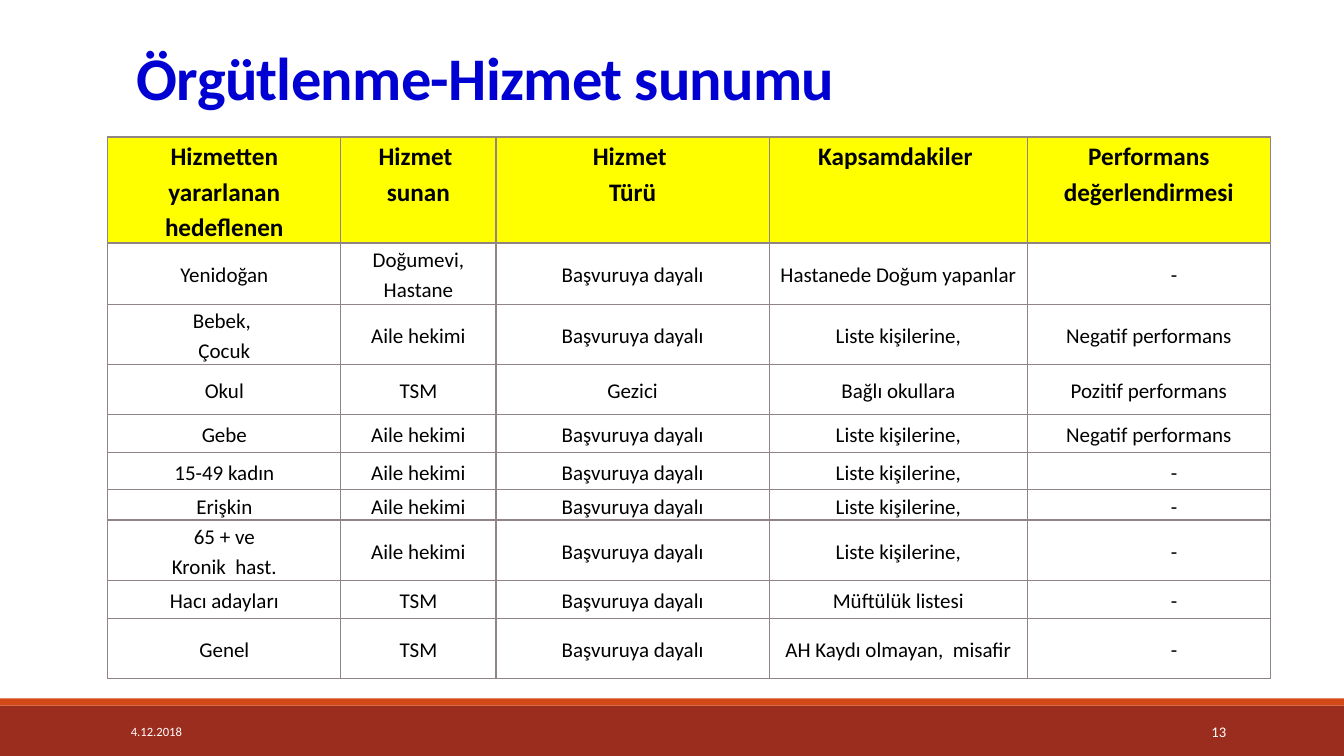
from lxml import etree
from pptx import Presentation
from pptx.dml.color import RGBColor
from pptx.enum.shapes import MSO_SHAPE
from pptx.enum.text import MSO_ANCHOR, PP_ALIGN
from pptx.oxml.ns import qn
from pptx.util import Pt

PX = 9144
FONT = "Calibri"
RECTANGLE = MSO_SHAPE.RECTANGLE
TOP, MIDDLE, BOTTOM = MSO_ANCHOR.TOP, MSO_ANCHOR.MIDDLE, MSO_ANCHOR.BOTTOM
LEFT, CENTER, RIGHT = PP_ALIGN.LEFT, PP_ALIGN.CENTER, PP_ALIGN.RIGHT

BLACK = RGBColor(0x00, 0x00, 0x00)
WHITE = RGBColor(0xFF, 0xFF, 0xFF)
BLUE = RGBColor(0x00, 0x00, 0xD2)
YELLOW = RGBColor(0xFF, 0xFF, 0x00)
BRICK = RGBColor(0x9B, 0x2D, 0x1F)
ORANGE = RGBColor(0xD3, 0x48, 0x17)
GREY = RGBColor(0x91, 0x84, 0x85)

COLUMN_WIDTHS = [231, 154, 271, 256, 241]
ROW_HEIGHTS = [105, 61, 60, 49, 38, 37, 30, 60, 38, 59]
DASH_INDENT = 50

ON_REQUEST = "Başvuruya dayalı"
DOCTOR = "Aile hekimi"
LISTED = "Liste kişilerine,"
NEGATIVE = "Negatif performans"
ROWS = [
    ["Hizmetten yararlanan\nhedeflenen", "Hizmet \nsunan", "Hizmet \nTürü",
     "Kapsamdakiler ", "Performans\ndeğerlendirmesi"],
    ["Yenidoğan", "Doğumevi,\nHastane", ON_REQUEST, "Hastanede Doğum yapanlar", "-"],
    ["Bebek, \nÇocuk", DOCTOR, ON_REQUEST, LISTED, NEGATIVE],
    ["Okul", "TSM", "Gezici", "Bağlı okullara", "Pozitif performans"],
    ["Gebe", DOCTOR, ON_REQUEST, LISTED, NEGATIVE],
    ["15-49 kadın", DOCTOR, ON_REQUEST, LISTED, "-"],
    ["Erişkin", DOCTOR, ON_REQUEST, LISTED, "-"],
    ["65 + ve\nKronik  hast.", DOCTOR, ON_REQUEST, LISTED, "-"],
    ["Hacı adayları", "TSM", ON_REQUEST, "Müftülük listesi", "-"],
    ["Genel", "TSM", ON_REQUEST, "AH Kaydı olmayan,  misafir", "-"],
]


def format_paragraph(para, size, color, bold, align, spacing):
    """Style one paragraph and its runs."""
    para.alignment = align
    para.line_spacing = spacing
    for span in para.runs:
        span.font.name = FONT
        span.font.size = Pt(size)
        span.font.bold = bold
        span.font.color.rgb = color


def add_band(page, top, height, color):
    """Draw a plain band across the whole slide."""
    band = page.shapes.add_shape(RECTANGLE, 0, top * PX, 1333 * PX, height * PX)
    band.shadow.inherit = False
    band.fill.solid()
    band.fill.fore_color.rgb = color
    band.line.fill.background()


def add_text(page, text, area, size, color, align, anchor, bold=False, spacing=1.0):
    """Add a one-paragraph text box and return its paragraph."""
    box = page.shapes.add_textbox(*(length * PX for length in area))
    frame = box.text_frame
    frame.word_wrap = True
    frame.vertical_anchor = anchor
    frame.text = text
    para = frame.paragraphs[0]
    format_paragraph(para, size, color, bold, align, spacing)
    return para


def add_border(cell, side, points):
    """Append one grey border line to a table cell."""
    properties = cell._tc.get_or_add_tcPr()
    line = etree.SubElement(properties, qn(f"a:{side}"), w=str(Pt(points)))
    fill = etree.SubElement(line, qn("a:solidFill"))
    etree.SubElement(fill, qn("a:srgbClr"), val=str(GREY))


def fill_cell(cell, text, is_header, is_below_header):
    """Write and style one table cell."""
    for side in ("lnL", "lnR", "lnT", "lnB"):
        thick = is_header and side == "lnB" or is_below_header and side == "lnT"
        add_border(cell, side, 2 if thick else 1)
    if is_header:
        cell.fill.solid()
        cell.fill.fore_color.rgb = YELLOW
    else:
        cell.fill.background()
    cell.margin_left = cell.margin_right = 6 * PX
    cell.margin_top = cell.margin_bottom = 0
    cell.vertical_anchor = TOP if is_header else MIDDLE
    cell.text_frame.text = text
    for para in cell.text_frame.paragraphs:
        format_paragraph(para, 18 if is_header else 15, BLACK, is_header, CENTER, 1.15)
        if text == "-":
            para._p.get_or_add_pPr().set("marL", str(DASH_INDENT * PX))


def add_service_table(page):
    """Add the table of services by target group."""
    frame = page.shapes.add_table(
        len(ROWS), len(COLUMN_WIDTHS), 107 * PX, 136 * PX,
        sum(COLUMN_WIDTHS) * PX, sum(ROW_HEIGHTS) * PX)
    table = frame.table
    table.horz_banding = False
    for column, width in zip(table.columns, COLUMN_WIDTHS):
        column.width = width * PX
    for index, (row, height, texts) in enumerate(zip(table.rows, ROW_HEIGHTS, ROWS)):
        row.height = height * PX
        for cell, text in zip(row.cells, texts):
            fill_cell(cell, text, index == 0, index == 1)


def main():
    """Build the slide and save it."""
    deck = Presentation()
    deck.slide_width = 1333 * PX
    deck.slide_height = 750 * PX
    page = deck.slides.add_slide(deck.slide_layouts[6])
    add_band(page, 700, 50, BRICK)
    add_band(page, 693, 7, ORANGE)
    title = add_text(page, "Örgütlenme-Hizmet sunumu", (107, 18, 749, 99),
                     43.2, BLUE, CENTER, BOTTOM, bold=True, spacing=0.85)
    title.runs[0].font._element.set("spc", "-50")
    add_service_table(page)
    add_text(page, "13", (1083, 706, 143, 40), 10.5, WHITE, RIGHT, MIDDLE)
    add_text(page, "4.12.2018", (120, 706, 270, 40), 9, WHITE, LEFT, MIDDLE)
    deck.save("out.pptx")


if __name__ == "__main__":
    main()
